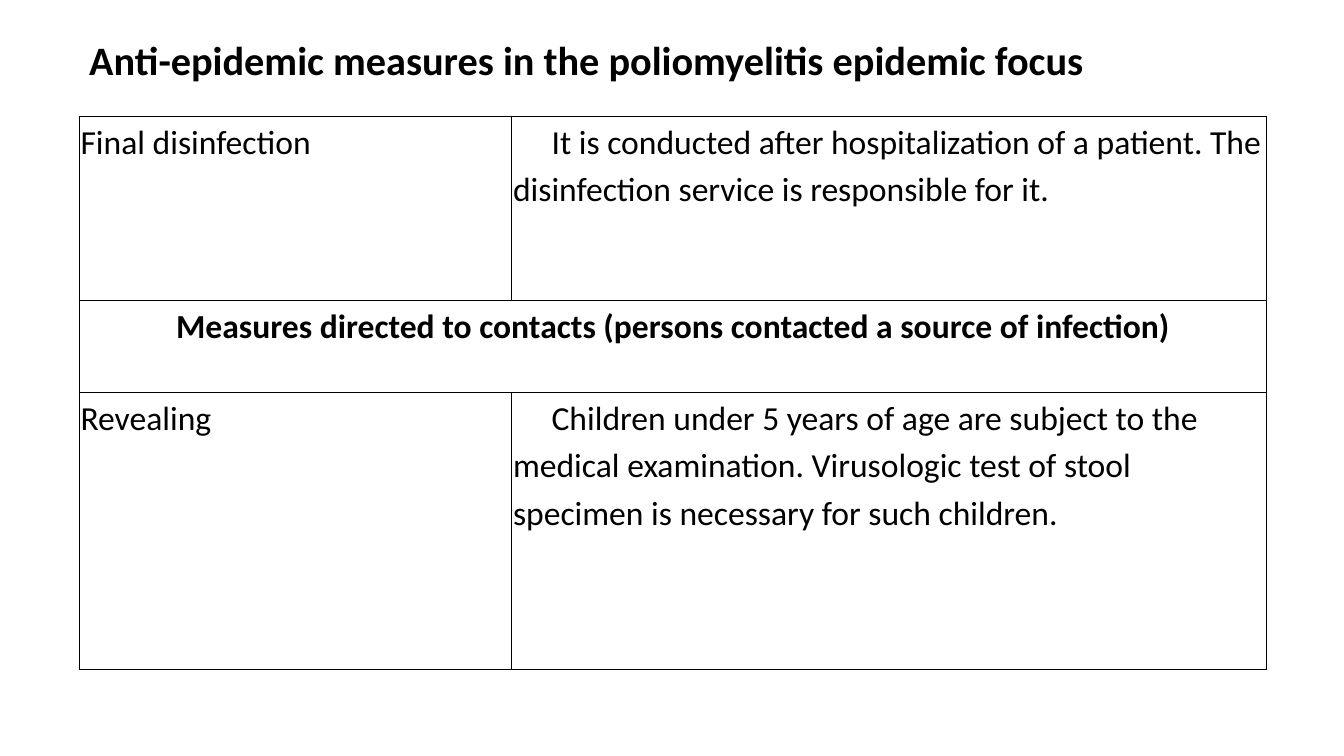
from lxml import etree
from pptx import Presentation
from pptx.dml.color import RGBColor
from pptx.enum.text import MSO_ANCHOR, PP_ALIGN
from pptx.oxml.ns import qn
from pptx.util import Cm, Pt

TOP = MSO_ANCHOR.TOP
LEFT, MID = PP_ALIGN.LEFT, PP_ALIGN.CENTER
BLACK, WHITE = "000000", "FFFFFF"
FONT = "Calibri"

TITLE = "Anti-epidemic measures in the poliomyelitis epidemic focus"
# A row with one text spans both columns
ROWS = [
    ("Final disinfection",
     "It is conducted after hospitalization of a patient. "
     "The disinfection service is responsible for it."),
    ("Measures directed to contacts (persons contacted a source of infection)",),
    ("Revealing",
     "Children under 5 years of age are subject to the medical examination. "
     "Virusologic test of stool specimen is necessary for such children."),
]
PARTS = (2, 1, 3)  # row heights, as shares of the table
SPLIT = 10.9       # width of the first column


def color(code):
    return RGBColor.from_string(code)


def write(frame, text, size=24, bold=False, align=LEFT, lead=1.15, indent=0):
    frame.word_wrap = True
    para = frame.paragraphs[0]
    para.alignment = align
    para.line_spacing = lead
    if indent:
        props = para._p.get_or_add_pPr()
        props.set("marL", "0")
        props.set("indent", str(Cm(indent)))
    run = para.add_run()
    run.text = text
    font = run.font
    font.name, font.size, font.bold = FONT, Pt(size), bold
    font.color.rgb = color(code=BLACK)


def style(cell):
    # Margins and borders come before the fill in the cell's XML
    cell.margin_left = cell.margin_right = Cm(0.03)
    cell.margin_top = cell.margin_bottom = 0
    props = cell._tc.get_or_add_tcPr()
    for side in ("lnL", "lnR", "lnT", "lnB"):
        line = etree.SubElement(props, qn("a:" + side), w=str(Pt(1)))
        fill = etree.SubElement(line, qn("a:solidFill"))
        etree.SubElement(fill, qn("a:srgbClr"), val=BLACK)
    cell.fill.solid()
    cell.fill.fore_color.rgb = color(WHITE)


def add_title(slide, left, top, width, height):
    frame = slide.shapes.add_textbox(
        Cm(left), Cm(top), Cm(width), Cm(height)).text_frame
    frame.vertical_anchor = TOP
    frame.margin_top = Cm(0.09)
    write(frame, TITLE, size=28.8, bold=True, lead=0.9)


def add_grid(slide, left, top, width, height):
    table = slide.shapes.add_table(
        len(ROWS), 2, Cm(left), Cm(top), Cm(width), Cm(height)).table
    table.first_row = table.horz_banding = False
    for col, size in zip(table.columns, (SPLIT, width - SPLIT)):
        col.width = Cm(size)
    for row, part in zip(table.rows, PARTS):
        row.height = Cm(height * part / sum(PARTS))
    for cell in table.iter_cells():
        style(cell)

    # Texts
    for r, texts in enumerate(ROWS):
        head = table.cell(r, 0)
        if len(texts) == 1:
            head.merge(table.cell(r, 1))
            write(head.text_frame, texts[0], bold=True, align=MID)
        else:
            write(head.text_frame, texts[0])
            write(table.cell(r, 1).text_frame, texts[1], indent=0.97)


def main():
    deck = Presentation()
    deck.slide_width, deck.slide_height = Cm(33.87), Cm(19.05)
    slide = deck.slides.add_slide(deck.slide_layouts[6])
    add_title(slide, 2, 0.94, 29.21, 2.41)
    add_grid(slide, 2, 2.93, 29.92, 13.94)
    deck.save("out.pptx")


if __name__ == "__main__":
    main()
